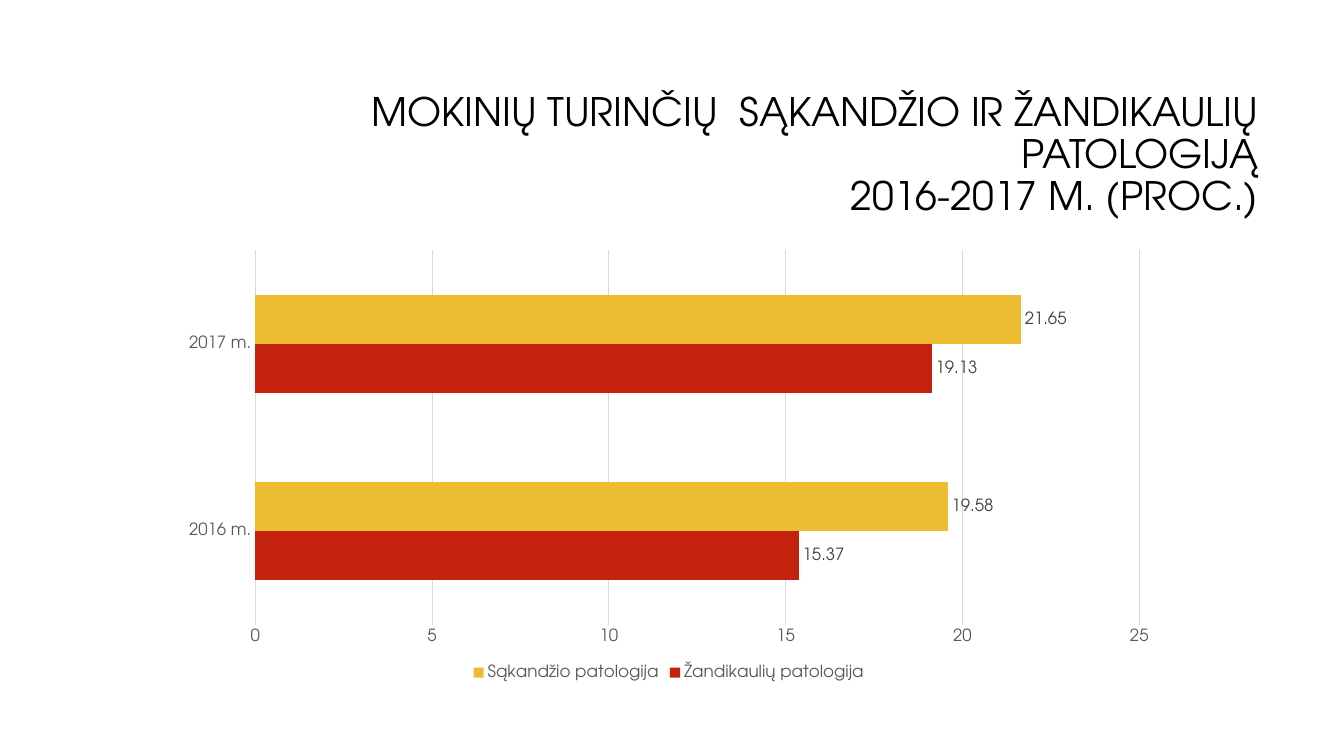
from pptx import Presentation
from pptx.chart.data import CategoryChartData
from pptx.dml.color import RGBColor
from pptx.enum.chart import XL_CHART_TYPE, XL_LABEL_POSITION, XL_LEGEND_POSITION, XL_TICK_MARK
from pptx.enum.text import MSO_ANCHOR, MSO_AUTO_SIZE, PP_ALIGN
from pptx.util import Pt

BAR_CLUSTERED = XL_CHART_TYPE.BAR_CLUSTERED
OUTSIDE_END = XL_LABEL_POSITION.OUTSIDE_END
LEGEND_BOTTOM = XL_LEGEND_POSITION.BOTTOM
NO_TICK = XL_TICK_MARK.NONE
MIDDLE = MSO_ANCHOR.MIDDLE
NO_AUTOFIT = MSO_AUTO_SIZE.NONE
RIGHT = PP_ALIGN.RIGHT

EMU_PER_PX = 9525
FONT = "TeX Gyre Adventor"
BLACK = RGBColor(0x00, 0x00, 0x00)
WHITE = RGBColor(0xFF, 0xFF, 0xFF)
LABEL_GREY = RGBColor(0x40, 0x40, 0x40)
AXIS_GREY = RGBColor(0x59, 0x59, 0x59)
GRID_GREY = RGBColor(0xD9, 0xD9, 0xD9)
RED = RGBColor(0xC4, 0x22, 0x0D)
YELLOW = RGBColor(0xEC, 0xBD, 0x31)

TITLE_LINES = [
    "MOKINIŲ TURINČIŲ  SĄKANDŽIO IR ŽANDIKAULIŲ PATOLOGIJĄ",
    "2016-2017 M. (PROC.)",
]
YEARS = ["2016 m.", "2017 m."]
PATHOLOGIES = [
    ("Žandikaulių patologija", [15.37, 19.13], RED),
    ("Sąkandžio patologija", [19.58, 21.65], YELLOW),
]


def px(length):
    return length * EMU_PER_PX


def style_font(font, size, color):
    font.name = FONT
    font.size = Pt(size)
    font.bold = False
    font.color.rgb = color


def style_line(line):
    line.color.rgb = GRID_GREY
    line.width = Pt(0.75)


def fill_title(title, box):
    title.left, title.top, title.width, title.height = map(px, box)
    frame = title.text_frame
    frame.word_wrap = True
    frame.auto_size = NO_AUTOFIT
    frame.vertical_anchor = MIDDLE
    para = frame.paragraphs[0]
    para.alignment = RIGHT
    para.line_spacing = 0.9
    for index, line in enumerate(TITLE_LINES):
        if index:
            para.add_line_break()
        span = para.add_run()
        span.text = line
        style_font(span.font, 28, BLACK)


def style_axes(chart):
    for axis in (chart.category_axis, chart.value_axis):
        axis.major_tick_mark = NO_TICK
        axis.minor_tick_mark = NO_TICK
        style_font(axis.tick_labels.font, 12, AXIS_GREY)
    chart.category_axis.has_major_gridlines = False
    style_line(chart.category_axis.format.line)
    values = chart.value_axis
    values.minimum_scale = 0
    values.maximum_scale = 25
    values.major_unit = 5
    values.has_major_gridlines = True
    values.format.line.fill.background()
    style_line(values.major_gridlines.format.line)


def add_pathology_chart(page, box):
    data = CategoryChartData()
    data.categories = YEARS
    for name, shares, _ in PATHOLOGIES:
        data.add_series(name, shares)
    chart = page.shapes.add_chart(BAR_CLUSTERED, *map(px, box), data).chart
    chart.has_title = False
    style_font(chart.font, 10, BLACK)
    style_axes(chart)

    chart.has_legend = True
    chart.legend.position = LEGEND_BOTTOM
    chart.legend.include_in_layout = False
    style_font(chart.legend.font, 12, AXIS_GREY)

    plot = chart.plots[0]
    plot.gap_width = 182
    plot.overlap = 0
    plot.vary_by_categories = False
    for series, (_, _, color) in zip(plot.series, PATHOLOGIES):
        series.format.fill.solid()
        series.format.fill.fore_color.rgb = color
        labels = series.data_labels
        labels.show_value = True
        labels.position = OUTSIDE_END
        style_font(labels.font, 12, LABEL_GREY)


def build_chart_page(deck):
    page = deck.slides.add_slide(deck.slide_layouts.get_by_name("Title Only"))
    page.background.fill.solid()
    page.background.fill.fore_color.rgb = WHITE
    fill_title(page.shapes.title, (304, 81, 904, 135))
    add_pathology_chart(page, (161, 230, 952, 422))


def main():
    deck = Presentation()
    deck.slide_width = px(1280)
    deck.slide_height = px(720)
    build_chart_page(deck)
    deck.save("out.pptx")


if __name__ == "__main__":
    main()
